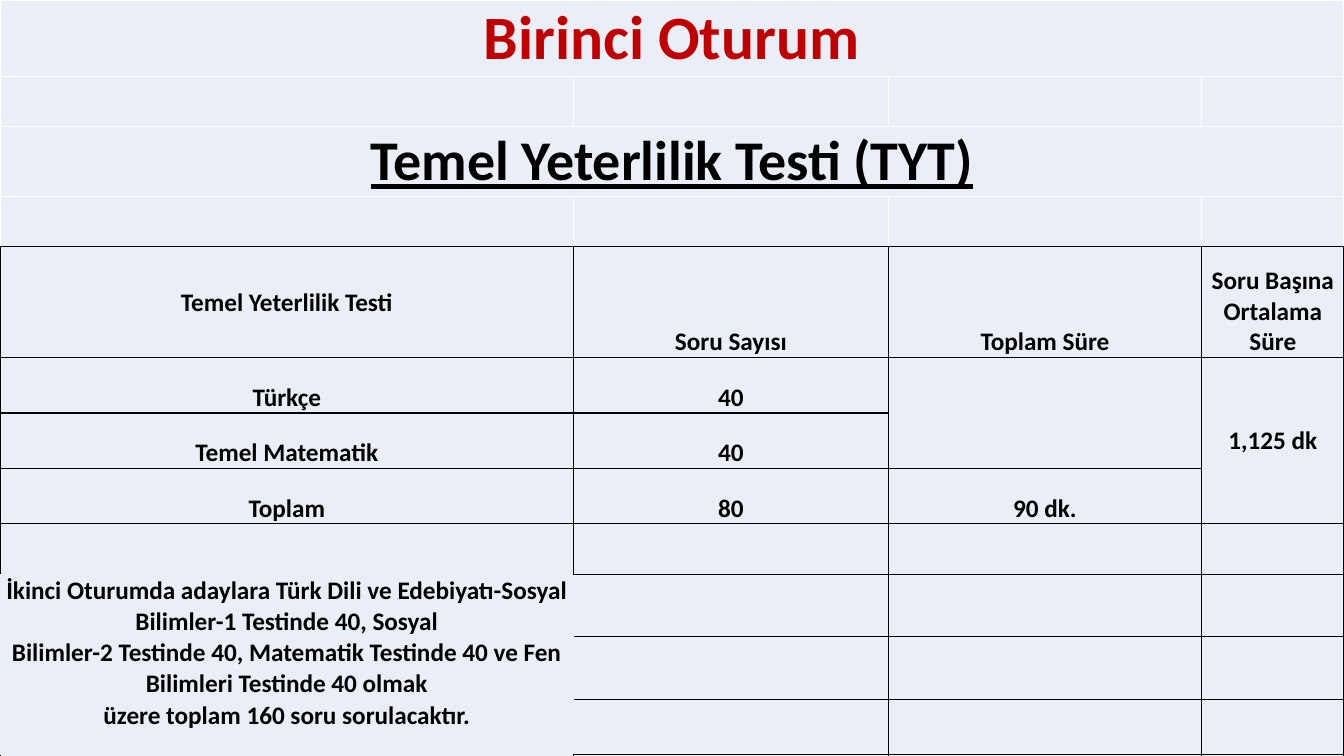
from dataclasses import dataclass
from lxml.etree import SubElement as sub
from pptx import Presentation
from pptx.dml.color import RGBColor as RGB
from pptx.enum.text import MSO_ANCHOR as Anchor, PP_ALIGN as Align
from pptx.oxml.ns import qn
from pptx.util import Inches, Pt


@dataclass(frozen=True)
class Theme:
    font: str = "Calibri"
    fill: str = "EAEFF7"
    ink: str = "000000"
    red: str = "C00000"
    white: str = "FFFFFF"
    title: int = 44
    head: int = 40
    body: int = 18
    line: int = 1


THEME = Theme()
WIDE, HIGH = 13.33, 7.5
COLS = [5.69, 3.12, 3.11, 1.41]
ROWS = [0.75, 0.5, 0.69, 0.5, 1.1, 0.55, 0.55, 0.55, 0.5, 0.62, 0.62, 0.55, 0.5]
TITLE, HEAD, GAP, LABEL = 0, 2, 3, 4
NOTES = range(9, 12)
TEXTS = {
    TITLE: ["Birinci Oturum"],
    HEAD: ["Temel Yeterlilik Testi (TYT)"],
    LABEL: ["Temel Yeterlilik Testi", "Soru Sayısı", "Toplam Süre",
            "Soru Başına Ortalama Süre"],
    5: ["Türkçe", "40", "", "1,125 dk"],
    6: ["Temel Matematik", "40"],
    7: ["Toplam", "80", "90 dk."],
    9: ["İkinci Oturumda adaylara Türk Dili ve Edebiyatı-Sosyal "
        "Bilimler-1 Testinde 40, Sosyal"],
    10: ["Bilimler-2 Testinde 40, Matematik Testinde 40 ve Fen "
         "Bilimleri Testinde 40 olmak"],
    11: ["üzere toplam 160 soru sorulacaktır."],
}
SPANS = [(TITLE, 0, TITLE, 3), (HEAD, 0, HEAD, 3), (5, 2, 6, 2), (5, 3, 7, 3)]
MIDDLE = {(LABEL, 0), (5, 3)}


def edges(row, col):
    """Give the line colour of each side of a cell, None for no line."""
    sides = dict.fromkeys("LRTB", THEME.white if row <= GAP else THEME.ink)
    if row == GAP:
        sides["B"] = THEME.ink
    if col == 0 and row in NOTES:
        sides = dict.fromkeys("LRTB")
    elif col == 0 and row == NOTES.start - 1:
        sides["B"] = None
    elif col == 0 and row == NOTES.stop:
        sides["T"] = None
    elif col == 1 and row in NOTES:
        sides["L"] = None
    return sides


def border(cell, sides):
    props = cell._tc.get_or_add_tcPr()
    for spot, (side, color) in enumerate(sides.items()):
        line = sub(props, qn(f"a:ln{side}"), w=str(Pt(THEME.line)))
        if color:
            sub(sub(line, qn("a:solidFill")), qn("a:srgbClr"), val=color)
        else:
            sub(line, qn("a:noFill"))
        props.insert(spot, line)


def write(cell, text, row, col):
    cell.margin_left = cell.margin_right = cell.margin_top = Inches(0.01)
    cell.margin_bottom = 0
    if (row, col) in MIDDLE:
        cell.vertical_anchor = Anchor.MIDDLE
    elif LABEL <= row < NOTES.start:
        cell.vertical_anchor = Anchor.BOTTOM
    para = cell.text_frame.paragraphs[0]
    para.alignment = Align.CENTER
    run = para.add_run()
    run.text = text
    font = run.font
    font.name, font.bold = THEME.font, True
    font.size = Pt({TITLE: THEME.title, HEAD: THEME.head}.get(row, THEME.body))
    font.color.rgb = RGB.from_string(THEME.red if row == TITLE else THEME.ink)
    font.underline = row == HEAD


def exam(slide, left, top, width):
    """Place the exam table, its columns scaled to the given width."""
    frame = slide.shapes.add_table(
        len(ROWS), len(COLS), Inches(left), Inches(top),
        Inches(width), Inches(sum(ROWS)))
    table = frame.table
    table.first_row = table.horz_banding = False
    for column, share in zip(table.columns, COLS):
        column.width = Inches(width * share / sum(COLS))
    for line, height in zip(table.rows, ROWS):
        line.height = Inches(height)
    for row in range(len(ROWS)):
        for col in range(len(COLS)):
            cell = table.cell(row, col)
            cell.fill.solid()
            cell.fill.fore_color.rgb = RGB.from_string(THEME.fill)
            border(cell, edges(row, col))
    for row, texts in TEXTS.items():
        for col, text in enumerate(texts):
            if text:
                write(table.cell(row, col), text, row, col)
    for top_row, first, end_row, last in SPANS:
        table.cell(top_row, first).merge(table.cell(end_row, last))


def main():
    deck = Presentation()
    deck.slide_width, deck.slide_height = Inches(WIDE), Inches(HIGH)
    slide = deck.slides.add_slide(deck.slide_layouts[6])
    exam(slide, 0, 0, WIDE)
    deck.save("out.pptx")


if __name__ == "__main__":
    main()
